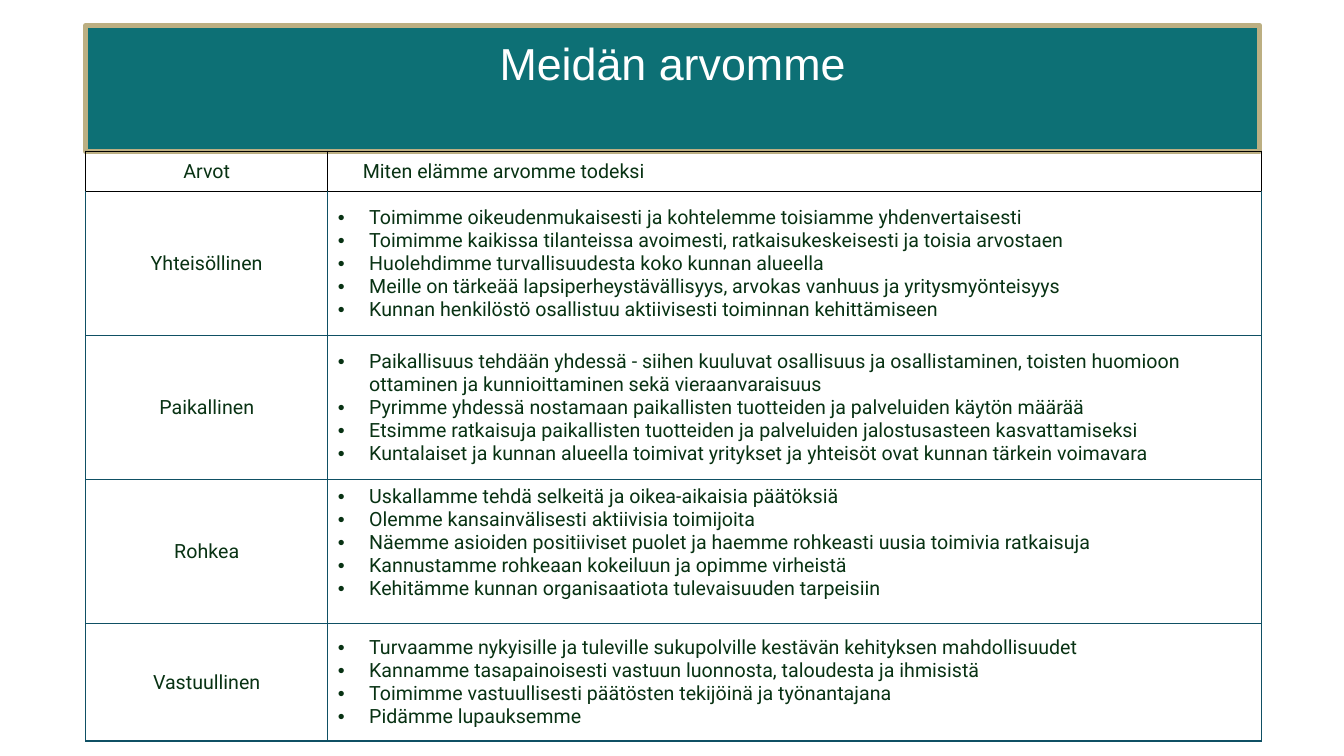
from lxml.etree import SubElement
from pptx import Presentation
from pptx.dml.color import RGBColor
from pptx.enum.shapes import MSO_SHAPE
from pptx.enum.text import MSO_ANCHOR as Anchor, PP_ALIGN as Align
from pptx.oxml import parse_xml
from pptx.oxml.ns import nsdecls, qn
from pptx.util import Cm, Pt

WHITE = RGBColor(0xFF, 0xFF, 0xFF)
BLACK = RGBColor(0, 0, 0)
TEAL = RGBColor(0x0D, 0x70, 0x75)
SAND = RGBColor(0xBC, 0xAF, 0x82)
GRID_BLUE = RGBColor(0x0F, 0x50, 0x64)
DARK_GREEN = RGBColor(0x08, 0x32, 0x13)

COLUMN_WIDTHS = (Cm(6.1), Cm(23.54))
ROW_HEIGHTS = (Cm(1.02), Cm(3.63), Cm(3.63), Cm(3.63), Cm(2.95))
HEADINGS = ("Arvot", "Miten elämme arvomme todeksi")
VALUES = {
    "Yhteisöllinen": (
        "Toimimme oikeudenmukaisesti ja kohtelemme toisiamme yhdenvertaisesti",
        "Toimimme kaikissa tilanteissa avoimesti, ratkaisukeskeisesti ja toisia arvostaen",
        "Huolehdimme turvallisuudesta koko kunnan alueella",
        "Meille on tärkeää lapsiperheystävällisyys, arvokas vanhuus ja yritysmyönteisyys",
        "Kunnan henkilöstö osallistuu aktiivisesti toiminnan kehittämiseen",
    ),
    "Paikallinen": (
        "Paikallisuus tehdään yhdessä - siihen kuuluvat osallisuus ja osallistaminen, "
        "toisten huomioon ottaminen ja kunnioittaminen sekä vieraanvaraisuus",
        "Pyrimme yhdessä nostamaan paikallisten tuotteiden ja palveluiden käytön määrää",
        "Etsimme ratkaisuja paikallisten tuotteiden ja palveluiden jalostusasteen kasvattamiseksi",
        "Kuntalaiset ja kunnan alueella toimivat yritykset ja yhteisöt ovat kunnan tärkein voimavara",
    ),
    "Rohkea": (
        "Uskallamme tehdä selkeitä ja oikea-aikaisia päätöksiä",
        "Olemme kansainvälisesti aktiivisia toimijoita",
        "Näemme asioiden positiiviset puolet ja haemme rohkeasti uusia toimivia ratkaisuja",
        "Kannustamme rohkeaan kokeiluun ja opimme virheistä",
        "Kehitämme kunnan organisaatiota tulevaisuuden tarpeisiin",
    ),
    "Vastuullinen": (
        "Turvaamme nykyisille ja tuleville sukupolville kestävän kehityksen mahdollisuudet",
        "Kannamme tasapainoisesti vastuun luonnosta, taloudesta ja ihmisistä",
        "Toimimme vastuullisesti päätösten tekijöinä ja työnantajana",
        "Pidämme lupauksemme",
    ),
}


def set_font(paragraph, name, size, color):
    paragraph.font.name = name
    paragraph.font.size = Pt(size)
    paragraph.font.color.rgb = color


def add_title_band(slide, left, top, width, height):
    band = slide.shapes.add_shape(MSO_SHAPE.RECTANGLE, left, top, width, height)
    band.shadow.inherit = False
    band.fill.solid()
    band.fill.fore_color.rgb = TEAL
    band.line.color.rgb = SAND
    band.line.width = Pt(3.5)
    frame = band.text_frame
    frame.word_wrap = True
    frame.vertical_anchor = Anchor.TOP
    frame.margin_left = frame.margin_right = Cm(1)
    frame.margin_top = Cm(0.42)
    paragraph = frame.paragraphs[0]
    paragraph.text = "Meidän arvomme"
    paragraph.alignment = Align.CENTER
    paragraph.line_spacing = 0.9
    set_font(paragraph, "Arial", 32, WHITE)


def set_borders(cell, color):
    properties = cell._tc.get_or_add_tcPr()
    for index, side in enumerate("LRTB"):
        properties.insert(index, parse_xml(
            f'<a:ln{side} {nsdecls("a")} w="{Pt(1)}"><a:solidFill>'
            f'<a:srgbClr val="{color}"/></a:solidFill></a:ln{side}>'))


def set_fill(cell, tinted):
    """Leave the cell clear, or give it a mostly transparent white."""
    if not tinted:
        cell.fill.background()
        return
    cell.fill.solid()
    cell.fill.fore_color.rgb = WHITE
    color = cell._tc.tcPr.find(".//" + qn("a:srgbClr"))
    SubElement(color, qn("a:alpha"), val="20000")


def indent(paragraph, left, first=0):
    properties = paragraph._p.get_or_add_pPr()
    properties.set("marL", str(left))
    properties.set("indent", str(first))
    return properties


def add_bullet(paragraph):
    properties = indent(paragraph, Cm(0.79), -Cm(0.79))
    SubElement(properties, qn("a:buFont"), typeface="Arial")
    SubElement(properties, qn("a:buChar"), char="•")


def fill_cell(cell, lines, bulleted=False, centered=False):
    cell.vertical_anchor = Anchor.MIDDLE
    frame = cell.text_frame
    for index, line in enumerate(lines):
        paragraph = frame.add_paragraph() if index else frame.paragraphs[0]
        paragraph.text = line
        if bulleted:
            add_bullet(paragraph)
        if centered:
            paragraph.alignment = Align.CENTER
        set_font(paragraph, "Roboto", 14, DARK_GREEN)


def add_values_table(slide, left, top, width, height):
    table = slide.shapes.add_table(
        len(ROW_HEIGHTS), len(COLUMN_WIDTHS), left, top, width, height).table
    table.first_row = table.horz_banding = False
    for column, column_width in zip(table.columns, COLUMN_WIDTHS):
        column.width = column_width
    for row, row_height in zip(table.rows, ROW_HEIGHTS):
        row.height = row_height

    fill_cell(table.cell(0, 0), HEADINGS[:1], centered=True)
    fill_cell(table.cell(0, 1), HEADINGS[1:])
    indent(table.cell(0, 1).text_frame.paragraphs[0], Cm(0.63))
    for row_index, (value, actions) in enumerate(VALUES.items(), start=1):
        fill_cell(table.cell(row_index, 0), [value], centered=True)
        fill_cell(table.cell(row_index, 1), actions, bulleted=True)
        if value == "Rohkea":
            table.cell(row_index, 1).vertical_anchor = Anchor.TOP

    for row_index, row in enumerate(table.rows):
        for cell in row.cells:
            set_fill(cell, tinted=row_index % 2 == 1)
            set_borders(cell, GRID_BLUE if row_index else BLACK)
    for cell in table.rows[1].cells:
        top_color = cell._tc.tcPr.find(qn("a:lnT")).find(".//" + qn("a:srgbClr"))
        top_color.set("val", str(BLACK))


def main():
    presentation = Presentation()
    presentation.slide_width = Cm(33.87)
    presentation.slide_height = Cm(19.05)
    slide = presentation.slides.add_slide(presentation.slide_layouts[6])
    left = Cm(2.16)
    add_title_band(slide, left, Cm(0.64), Cm(29.59), Cm(3.18))
    add_values_table(slide, left, Cm(3.81), sum(COLUMN_WIDTHS), sum(ROW_HEIGHTS))
    presentation.save("out.pptx")


if __name__ == "__main__":
    main()
